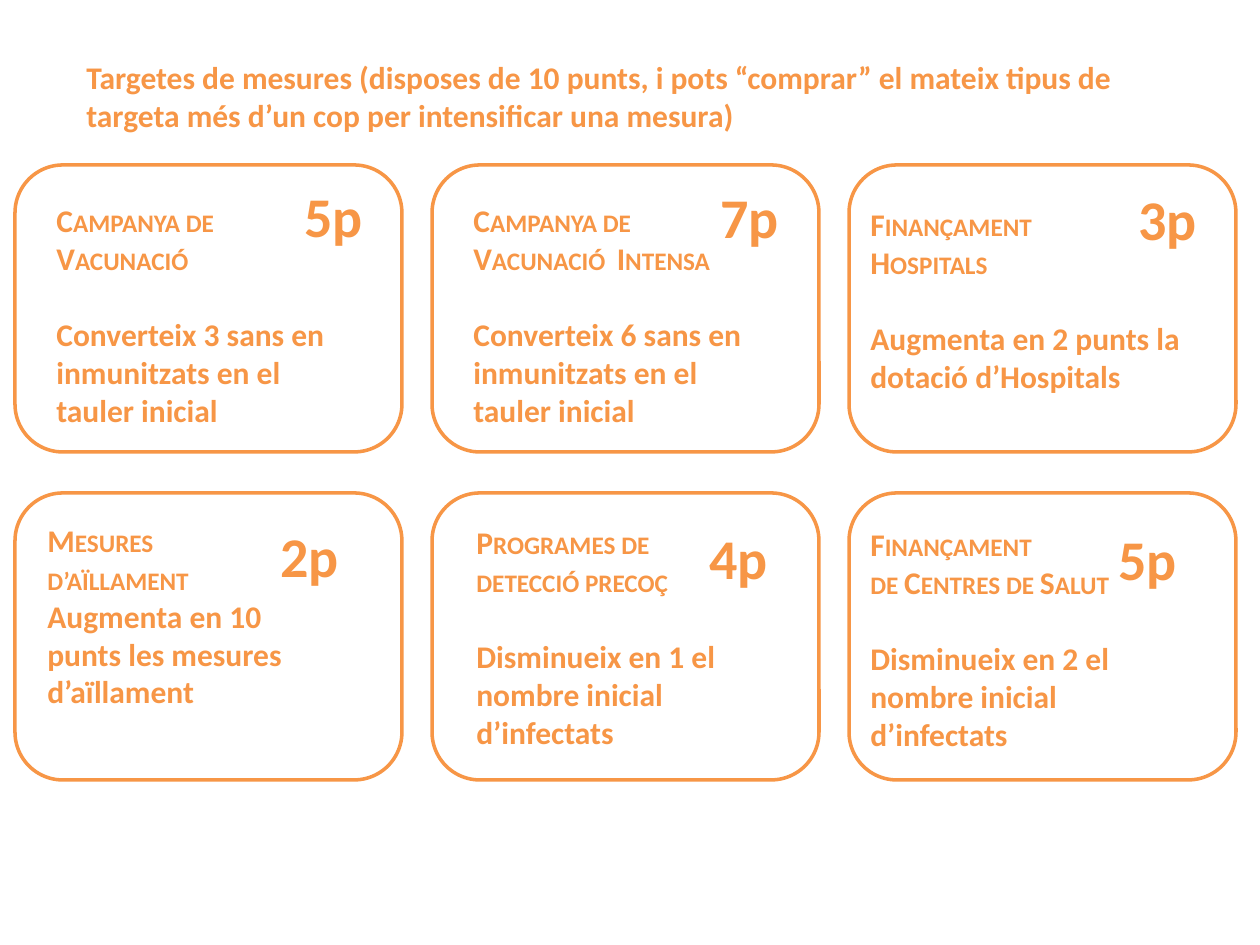
from dataclasses import dataclass

from pptx import Presentation
from pptx.dml.color import RGBColor
from pptx.enum.shapes import MSO_SHAPE
from pptx.enum.text import MSO_AUTO_SIZE
from pptx.util import Emu, Pt

ROUNDED_RECTANGLE = MSO_SHAPE.ROUNDED_RECTANGLE
FIT_SHAPE = MSO_AUTO_SIZE.SHAPE_TO_FIT_TEXT

ORANGE = RGBColor(0xF7, 0x96, 0x46)
WHITE = RGBColor(0xFF, 0xFF, 0xFF)

EMU_PER_PX = 914400 / 126
SLIDE_WIDTH, SLIDE_HEIGHT = 1260, 945

CARD_LEFT, CARD_TOP = 15, 165
CARD_WIDTH, CARD_HEIGHT = 387, 287
COLUMN_STEP, ROW_STEP = 417, 328
COLUMNS = 3
COST_WIDTH, COST_HEIGHT = 110, 81
BODY_SIZE, COST_SIZE = 18, 32
EMPTY_LINE = 22


@dataclass
class Card:
    headings: list[str]
    effect: str
    cost: str
    text_box: tuple[int, int, int, int]
    cost_at: tuple[int, int]
    gap: int = EMPTY_LINE


CARDS = [
    Card(["Campanya de Vacunació"],
         "Converteix 3 sans en inmunitzats en el tauler inicial",
         "5p", (44, 195, 297, 242), (292, 175)),
    Card(["Campanya de Vacunació  Intensa"],
         "Converteix 6 sans en inmunitzats en el tauler inicial",
         "7p", (461, 195, 297, 242), (708, 176)),
    Card(["Finançament", "Hospitals"],
         "Augmenta en 2 punts la dotació d’Hospitals",
         "3p", (858, 199, 348, 204), (1126, 178)),
    Card(["Mesures", "d’aïllament"],
         "Augmenta en 10 punts les mesures d’aïllament",
         "2p", (35, 515, 287, 204), (268, 515), gap=0),
    Card(["Programes de detecció precoç"],
         "Disminueix en 1 el nombre inicial d’infectats",
         "4p", (464, 517, 287, 242), (697, 517)),
    Card(["Finançament", "de Centres de Salut"],
         "Disminueix en 2 el nombre inicial d’infectats",
         "5p", (858, 519, 287, 242), (1106, 518)),
]


def px(length):
    return Emu(round(length * EMU_PER_PX))


class SlideBuilder:
    def __init__(self, slide, font="Calibri", color=ORANGE):
        self.slide = slide
        self.font = font
        self.color = color

    def frame(self, left, top):
        """Draw the rounded outline of one card."""
        shape = self.slide.shapes.add_shape(
            ROUNDED_RECTANGLE, px(left), px(top), px(CARD_WIDTH), px(CARD_HEIGHT))
        shape.shadow.inherit = False
        shape.fill.solid()
        shape.fill.fore_color.rgb = WHITE
        shape.line.color.rgb = self.color
        shape.line.width = Pt(2)

    def text(self, box, lines, size=BODY_SIZE):
        """Add a bold text box, one paragraph a line, and return its paragraphs."""
        text_frame = self.slide.shapes.add_textbox(*map(px, box)).text_frame
        text_frame.word_wrap = True
        text_frame.auto_size = FIT_SHAPE
        text_frame.text = "\n".join(lines)
        for paragraph in text_frame.paragraphs:
            for run in paragraph.runs:
                run.font.name = self.font
                run.font.size = Pt(size)
                run.font.bold = True
                run.font.color.rgb = self.color
        return text_frame.paragraphs

    def card_text(self, card):
        *headings, effect = self.text(card.text_box, card.headings + [card.effect])
        for paragraph in headings:
            for run in paragraph.runs:
                run.font._element.set("cap", "small")
        effect.space_before = Pt(card.gap)
        self.text((*card.cost_at, COST_WIDTH, COST_HEIGHT), [card.cost], COST_SIZE)


def main():
    presentation = Presentation()
    presentation.slide_width = px(SLIDE_WIDTH)
    presentation.slide_height = px(SLIDE_HEIGHT)
    builder = SlideBuilder(
        presentation.slides.add_slide(presentation.slide_layouts[6]))

    builder.text((74, 52, 1111, 89), [
        "Targetes de mesures (disposes de 10 punts, i pots “comprar” el mateix "
        "tipus de targeta més d’un cop per intensificar una mesura)"])
    for index, card in enumerate(CARDS):
        row, column = divmod(index, COLUMNS)
        builder.frame(CARD_LEFT + column * COLUMN_STEP, CARD_TOP + row * ROW_STEP)
        builder.card_text(card)

    presentation.save("out.pptx")


if __name__ == "__main__":
    main()
